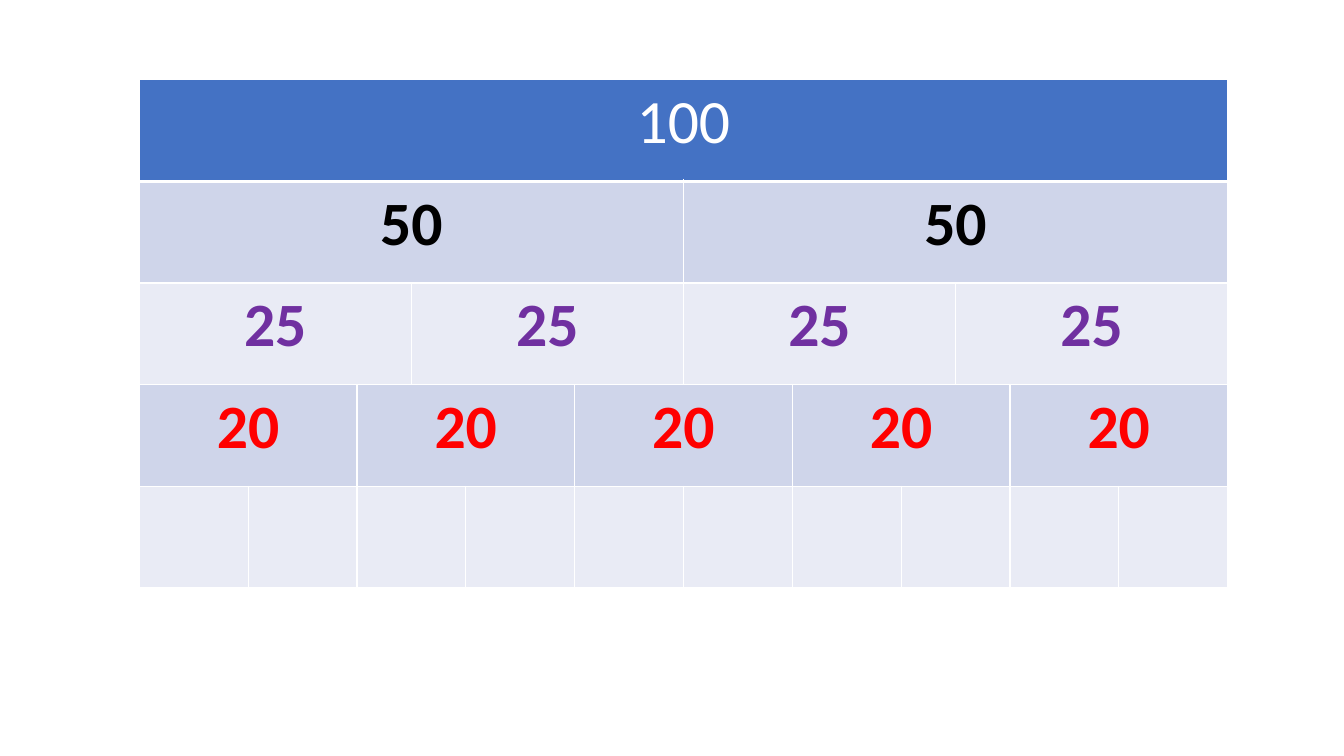
from math import lcm
from pptx import Presentation, util as u
from pptx.dml.color import RGBColor
from pptx.enum import text
from pptx.oxml import parse_xml
from pptx.oxml.ns import nsdecls

ROWS = [
    dict(parts=1, label="100", fill="header", color="white", bold=False),
    dict(parts=2, label="50", fill="dark", color="black", bold=True),
    dict(parts=4, label="25", fill="light", color="purple", bold=True),
    dict(parts=5, label="20", fill="dark", color="red", bold=True),
    dict(parts=10, label="", fill="light", color="black", bold=True),
]
THEME = dict(
    font="Calibri", size=u.Pt(44), border=u.Pt(1), header_border=u.Pt(3),
    header="4472C4", dark="CFD5EA", light="E9EBF5",
    white="FFFFFF", black="000000", purple="7030A0", red="FF0000",
)
LEFT, TOP, WIDTH, ROW_HEIGHT = u.Cm(3.51), u.Cm(2.01), u.Cm(27.43), u.Cm(2.56)


def add_borders(cell, bottom):
    tcPr = cell._tc.get_or_add_tcPr()
    widths = dict(L=THEME["border"], R=THEME["border"], T=THEME["border"], B=bottom)
    for side, width in widths.items():
        tcPr.append(parse_xml(
            f'<a:ln{side} {nsdecls("a")} w="{width}"><a:solidFill>'
            f'<a:srgbClr val="{THEME["white"]}"/></a:solidFill></a:ln{side}>'))


def style_cell(cell, row):
    add_borders(cell, THEME["header_border" if row["fill"] == "header" else "border"])
    cell.fill.solid()
    cell.fill.fore_color.rgb = RGBColor.from_string(THEME[row["fill"]])


def write_label(cell, row):
    p = cell.text_frame.paragraphs[0]
    p.text = row["label"]
    p.alignment = text.PP_ALIGN.CENTER
    p.font.name, p.font.size, p.font.bold = THEME["font"], THEME["size"], row["bold"]
    p.font.color.rgb = RGBColor.from_string(THEME[row["color"]])


def main():
    prs = Presentation()
    prs.slide_width, prs.slide_height = u.Cm(33.87), u.Cm(19.05)
    s = prs.slides.add_slide(prs.slide_layouts[6])

    units = lcm(*(row["parts"] for row in ROWS))
    edges = sorted({i * units // row["parts"]
                    for row in ROWS for i in range(row["parts"] + 1)})
    table = s.shapes.add_table(len(ROWS), len(edges) - 1, LEFT, TOP,
                               WIDTH, ROW_HEIGHT * len(ROWS)).table
    for column, start, end in zip(table.columns, edges, edges[1:]):
        column.width = WIDTH * (end - start) // units

    for r, row in enumerate(ROWS):
        table.rows[r].height = ROW_HEIGHT
        for cell in table.rows[r].cells:
            style_cell(cell, row)
        step = units // row["parts"]
        for start in range(0, units, step):
            first, last = edges.index(start), edges.index(start + step) - 1
            cell = table.cell(r, first)
            if last > first:
                cell.merge(table.cell(r, last))
            write_label(cell, row)

    prs.save("out.pptx")


if __name__ == "__main__":
    main()
